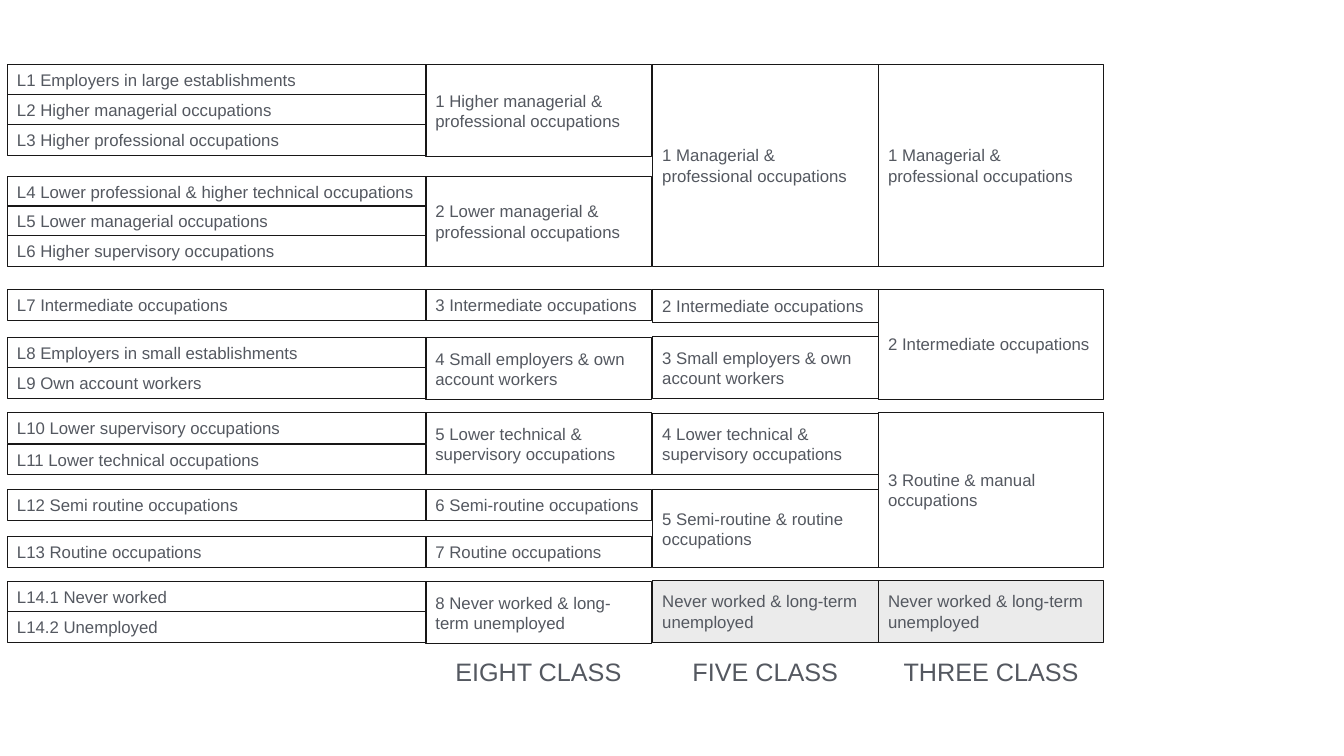
from dataclasses import dataclass

from lxml import etree
from pptx import Presentation
from pptx import util as u
from pptx.dml.color import RGBColor
from pptx.enum import shapes, text
from pptx.oxml.ns import qn

PX = 9144  # EMU in one px, 100 px to the inch
SLIDE_WIDTH, SLIDE_HEIGHT = 1333, 750
INK = RGBColor(0x54, 0x58, 0x60)
OUTLINE = RGBColor(0x18, 0x17, 0x17)
GREY = RGBColor(0xD9, 0xD9, 0xD9)
MIDDLE, TOP = text.MSO_ANCHOR.MIDDLE, text.MSO_ANCHOR.TOP
HEADING_TOP, HEADING_HEIGHT = 646, 40


@dataclass(frozen=True)
class Cell:
    label: str
    top: int
    height: int
    anchor: text.MSO_ANCHOR = MIDDLE
    shaded: bool = False


@dataclass(frozen=True)
class Column:
    left: int
    width: int
    heading: str
    cells: tuple[Cell, ...]


NOT_WORKING = Cell("Never worked & long-term unemployed", 576, 61, shaded=True)

COLUMNS = (
    Column(7, 416, "", (
        Cell("L1 Employers in large establishments", 64, 30),
        Cell("L2 Higher managerial occupations", 94, 30),
        Cell("L3 Higher professional occupations", 124, 30),
        Cell("L4 Lower professional & higher technical occupations", 175, 30),
        Cell("L5 Lower managerial occupations", 204, 30),
        Cell("L6 Higher supervisory occupations", 234, 30),
        Cell("L7 Intermediate occupations", 287, 31),
        Cell("L8 Employers in small establishments", 335, 30, TOP),
        Cell("L9 Own account workers", 365, 30, TOP),
        Cell("L10 Lower supervisory occupations", 409, 31, TOP),
        Cell("L11 Lower technical occupations", 441, 30, TOP),
        Cell("L12 Semi routine occupations", 486, 30, TOP),
        Cell("L13 Routine occupations", 532, 31, TOP),
        Cell("L14.1 Never worked", 577, 30, TOP),
        Cell("L14.2 Unemployed", 607, 30, TOP),
    )),
    Column(422, 224, "EIGHT CLASS", (
        Cell("1 Higher managerial & professional occupations", 64, 91),
        Cell("2 Lower managerial & professional occupations", 175, 89),
        Cell("3 Intermediate occupations", 287, 31),
        Cell("4 Small employers & own account workers", 335, 61),
        Cell("5 Lower technical & supervisory occupations", 409, 62),
        Cell("6 Semi-routine occupations", 486, 30),
        Cell("7 Routine occupations", 532, 31),
        Cell("8 Never worked & long-term unemployed", 577, 61),
    )),
    Column(647, 224, "FIVE CLASS", (
        Cell("1 Managerial & professional occupations", 64, 200),
        Cell("2 Intermediate occupations", 287, 33),
        Cell("3 Small employers & own account workers", 334, 61),
        Cell("4 Lower technical & supervisory occupations", 410, 61),
        Cell("5 Semi-routine & routine occupations", 486, 77),
        NOT_WORKING,
    )),
    Column(871, 224, "THREE CLASS", (
        Cell("1 Managerial & professional occupations", 64, 200),
        Cell("2 Intermediate occupations", 287, 109),
        Cell("3 Routine & manual occupations", 409, 154),
        NOT_WORKING,
    )),
)


def write(box, label: str, size: int, align: text.PP_ALIGN, anchor: text.MSO_ANCHOR) -> None:
    frame = box.text_frame
    frame_format = {"word_wrap": True, "vertical_anchor": anchor,
                    "auto_size": text.MSO_AUTO_SIZE.SHAPE_TO_FIT_TEXT}
    for name, value in frame_format.items():
        setattr(frame, name, value)
    para = frame.paragraphs[0]
    para.alignment = align
    span = para.add_run()
    span.text = label
    for name, value in {"name": "Arial", "size": u.Pt(size)}.items():
        setattr(span.font, name, value)
    span.font.color.rgb = INK


def shade(box) -> None:
    """Fill the box with half-transparent grey."""
    box.fill.solid()
    box.fill.fore_color.rgb = GREY
    color = box.fill._xPr.find(qn("a:solidFill")).find(qn("a:srgbClr"))
    etree.SubElement(color, qn("a:alpha"), val="50000")


def draw_cell(page, column: Column, cell: Cell) -> None:
    bounds = (column.left, cell.top, column.width, cell.height)
    box = page.shapes.add_shape(shapes.MSO_SHAPE.RECTANGLE, *(n * PX for n in bounds))
    box.shadow.inherit = False
    box.line.color.rgb = OUTLINE
    box.line.width = u.Pt(0.75)
    if cell.shaded:
        shade(box)
    else:
        box.fill.background()
    write(box, cell.label, 12, text.PP_ALIGN.LEFT, cell.anchor)


def draw_heading(page, column: Column) -> None:
    bounds = (column.left, HEADING_TOP, column.width, HEADING_HEIGHT)
    box = page.shapes.add_textbox(*(n * PX for n in bounds))
    write(box, column.heading, 18, text.PP_ALIGN.CENTER, TOP)


def main() -> None:
    deck = Presentation()
    deck.slide_width, deck.slide_height = SLIDE_WIDTH * PX, SLIDE_HEIGHT * PX
    page = deck.slides.add_slide(deck.slide_layouts[6])
    for column in COLUMNS:
        if column.heading:
            draw_heading(page, column)
        for cell in column.cells:
            draw_cell(page, column, cell)
    deck.save("out.pptx")


if __name__ == "__main__":
    main()
